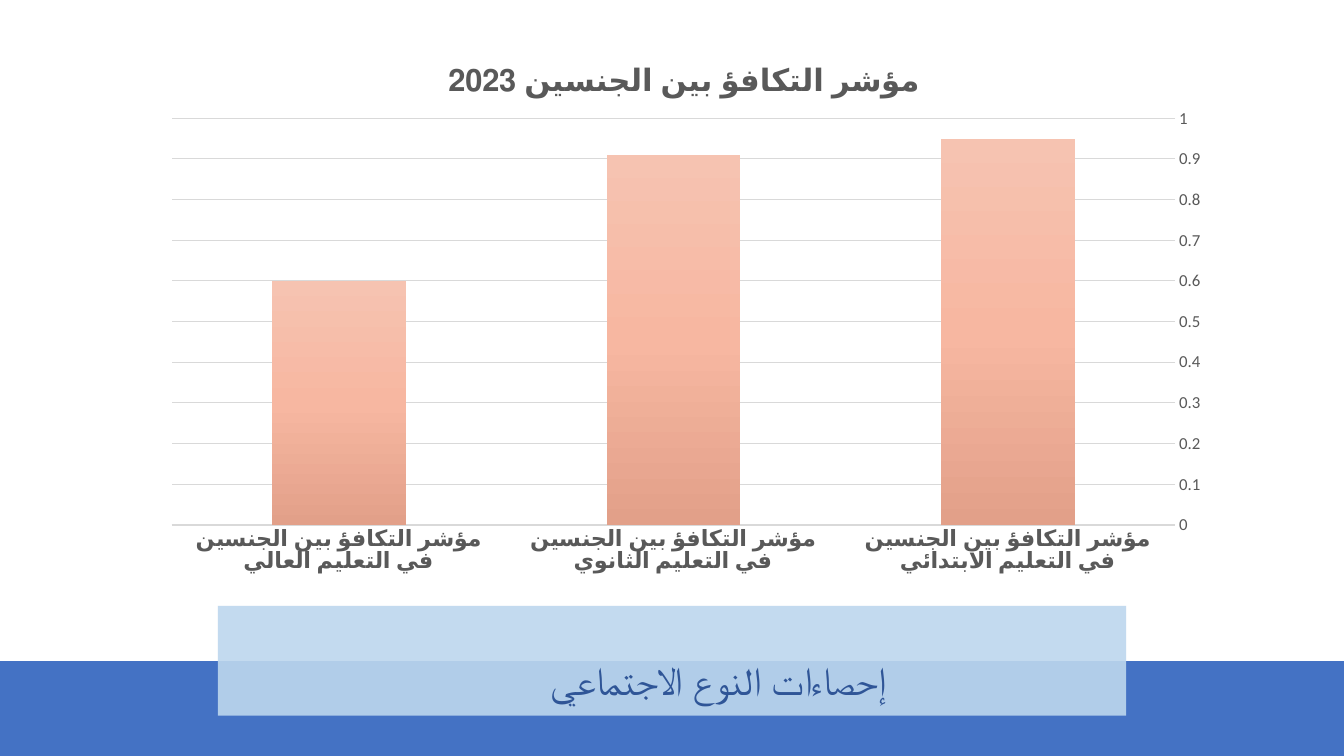
from lxml import etree
from pptx import Presentation, util as u
from pptx.chart.data import CategoryChartData
from pptx.dml.color import RGBColor
from pptx.enum import chart as ch, shapes, text
from pptx.oxml import parse_xml
from pptx.oxml.ns import nsdecls, qn

BLUE = RGBColor(0x44, 0x72, 0xC4)
PALE = RGBColor(0xBD, 0xD7, 0xEE)
NAVY = RGBColor(0x2F, 0x55, 0x97)
GRAY = RGBColor(0x59, 0x59, 0x59)
RULE = RGBColor(0xD9, 0xD9, 0xD9)
WHITE = RGBColor(0xFF, 0xFF, 0xFF)
STOPS = [
    (0, RGBColor(0xF6, 0xC3, 0xB1)),
    (50, RGBColor(0xF7, 0xB7, 0xA1)),
    (100, RGBColor(0xE2, 0xA0, 0x89)),
]


def style(font, size, color, bold=False, name="Calibri"):
    font.size = u.Pt(size)
    font.bold = bold
    font.name = name
    font.color.rgb = color


def write(para, words):
    para.alignment = text.PP_ALIGN.CENTER
    para._p.get_or_add_pPr().set("rtl", "1")
    run = para.add_run()
    run.text = words
    return run.font


prs = Presentation()
prs.slide_width = u.Inches(13.33)
prs.slide_height = u.Inches(7.5)
slide = prs.slides.add_slide(prs.slide_layouts[6])
back = slide.background.fill
back.solid()
back.fore_color.rgb = WHITE

bands = [(0, 6.56, 13.33, 0.94, BLUE, 100), (2.16, 6.01, 9.01, 1.09, PALE, 90)]
for left, top, width, height, color, solid in bands:
    band = slide.shapes.add_shape(
        shapes.MSO_SHAPE.RECTANGLE, *map(u.Inches, (left, top, width, height)))
    band.shadow.inherit = False
    band.fill.solid()
    band.fill.fore_color.rgb = color
    band.line.fill.background()
    if solid < 100:
        tint = band.fill._xPr.find(".//" + qn("a:srgbClr"))
        etree.SubElement(tint, qn("a:alpha")).set("val", str(solid * 1000))

box = slide.shapes.add_textbox(*map(u.Inches, (4.84, 6.46, 4.57, 0.57)))
box.text_frame.word_wrap = True
style(write(box.text_frame.paragraphs[0], "إحصاءات النوع الاجتماعي"),
      28, NAVY, name="Lato")

index = "مؤشر التكافؤ بين الجنسين"
data = CategoryChartData()
data.categories = [
    f"{index} في التعليم {level}" for level in ("الابتدائي", "الثانوي", "العالي")]
data.add_series("Series 1", (0.95, 0.91, 0.6))
chart = slide.shapes.add_chart(
    ch.XL_CHART_TYPE.COLUMN_CLUSTERED,
    *map(u.Inches, (1.49, 0.42, 10.59, 5.38)), data).chart
chart.has_legend = False
chart.font.size = u.Pt(10)
chart.font.name = "Calibri"
chart.has_title = True
title = chart.chart_title
title.include_in_layout = False
style(write(title.text_frame.paragraphs[0], f"{index} 2023"), 22, GRAY, True)

cats = chart.category_axis
cats.reverse_order = True
cats.format.line.color.rgb = RULE
cats.format.line.width = u.Pt(1)
style(cats.tick_labels.font, 16, GRAY, True)

vals = chart.value_axis
vals.minimum_scale = 0
vals.maximum_scale = 1
vals.major_unit = 0.1
vals.format.line.fill.background()
grid = vals.major_gridlines.format.line
grid.color.rgb = RULE
grid.width = u.Pt(0.75)
style(vals.tick_labels.font, 12, GRAY)
for axis in (cats, vals):
    axis.major_tick_mark = ch.XL_TICK_MARK.NONE
    axis.minor_tick_mark = ch.XL_TICK_MARK.NONE

plot = chart.plots[0]
plot.gap_width = 150
plot.vary_by_categories = False
bars = plot.series[0]
bars.invert_if_negative = False
marks = "".join(
    f'<a:gs pos="{pos * 1000}"><a:srgbClr val="{color}"/></a:gs>'
    for pos, color in STOPS)
bars.format.fill.solid()
paint = bars.format.fill._xPr
paint.replace(paint.find(qn("a:solidFill")), parse_xml(
    f'<a:gradFill {nsdecls("a")} rotWithShape="1"><a:gsLst>{marks}</a:gsLst>'
    '<a:lin ang="5400000" scaled="0"/></a:gradFill>'))

area = chart.element.find(".//" + qn("c:plotArea"))
for old in area.findall(qn("c:layout")):
    area.remove(old)
sizes = "".join(
    f'<c:{key} val="{val}"/>'
    for key, val in (("x", 0.02), ("y", 0.14), ("w", 0.94), ("h", 0.75)))
area.insert(0, parse_xml(
    f'<c:layout {nsdecls("c")}><c:manualLayout><c:layoutTarget val="inner"/>'
    f'<c:xMode val="edge"/><c:yMode val="edge"/>{sizes}'
    '</c:manualLayout></c:layout>'))

prs.save("out.pptx")
